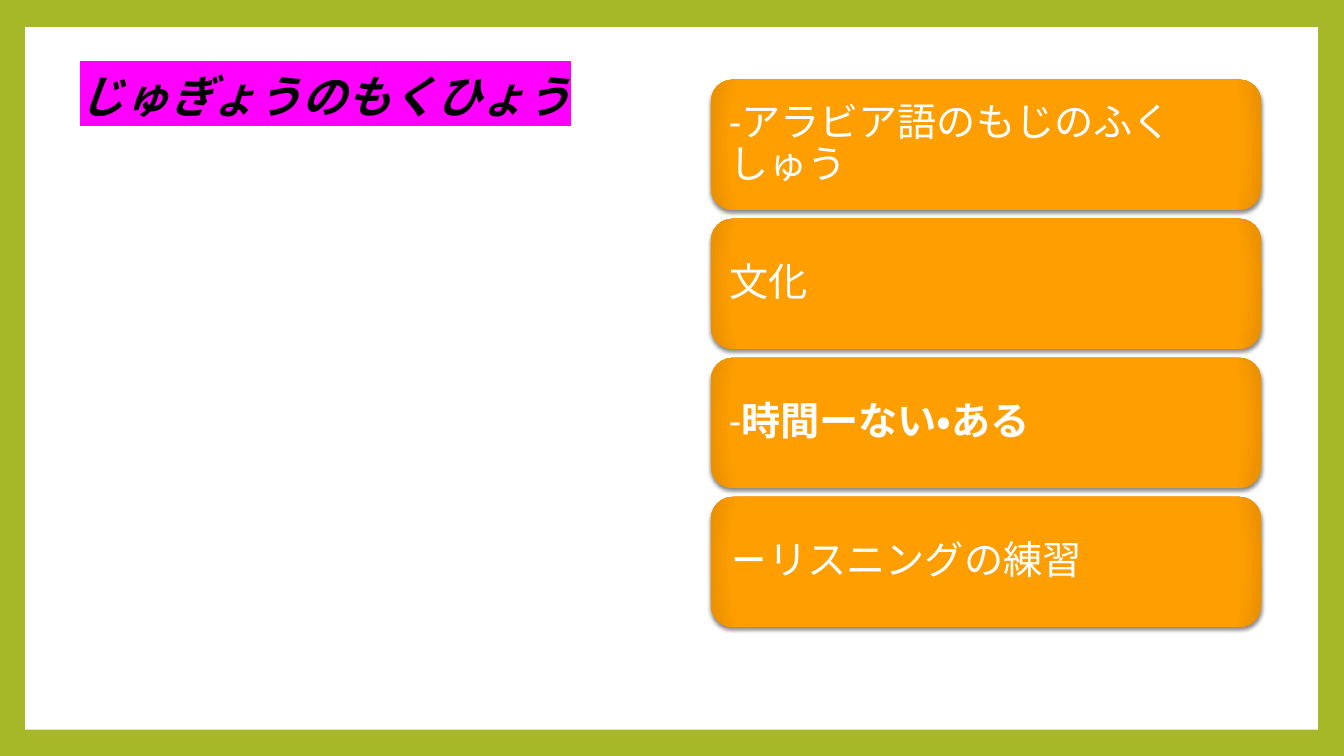
import pptx
import pptx.dml.color
import pptx.enum.lang
import pptx.enum.shapes
import pptx.enum.text
import pptx.oxml
import pptx.oxml.ns
import pptx.util

WIDTH, HEIGHT = 13.33, 7.5
GREEN = pptx.dml.color.RGBColor(0xA6, 0xB7, 0x27)
WHITE = pptx.dml.color.RGBColor(0xFF, 0xFF, 0xFF)
BLACK = pptx.dml.color.RGBColor(0x00, 0x00, 0x00)
MAGENTA = pptx.dml.color.RGBColor(0xFF, 0x00, 0xFF)
ORANGE = pptx.dml.color.RGBColor(0xFE, 0x9E, 0x00)
DARK_ORANGE = pptx.dml.color.RGBColor(0xE7, 0x8F, 0x00)
FONT = "Calibri"
NAMESPACE = pptx.oxml.ns.nsdecls("a")

TITLE = "じゅぎょうのもくひょう"
GOALS = [
    [("-アラビア語のもじのふくしゅう", False)],
    [("文化", False)],
    [("-", False), ("時間ーない・ある", True)],
    [("－", True), ("リスニングの練習", False)],
]


def inches(*lengths):
    """Convert lengths in inches to a list of slide lengths."""
    return [pptx.util.Inches(length) for length in lengths]


def set_margins(text_frame, margin):
    """Give all four sides of a text frame the same margin and wrap its text."""
    text_frame.word_wrap = True
    for side in ("left", "top", "right", "bottom"):
        setattr(text_frame, f"margin_{side}", pptx.util.Inches(margin))


def format_run(run, size, color, bold):
    """Set the font of a Japanese run."""
    run.font.name = FONT
    run.font.size = pptx.util.Pt(size)
    run.font.bold = bold
    run.font.color.rgb = color
    run.font.language_id = pptx.enum.lang.MSO_LANGUAGE_ID.JAPANESE


def add_frame(slide, left, top, width, height):
    """Draw the white page on the green background."""
    slide.background.fill.solid()
    slide.background.fill.fore_color.rgb = GREEN
    page = slide.shapes.add_shape(
        pptx.enum.shapes.MSO_SHAPE.RECTANGLE, *inches(left, top, width, height))
    page.shadow.inherit = False
    page.fill.solid()
    page.fill.fore_color.rgb = WHITE
    page.line.fill.background()


def add_title(slide, left, top, width, height):
    """Write the highlighted title in its box."""
    text_frame = slide.shapes.add_textbox(*inches(left, top, width, height)).text_frame
    set_margins(text_frame, 0)
    text_frame.text = TITLE
    run = text_frame.paragraphs[0].runs[0]
    format_run(run, 32, BLACK, True)
    run.font.italic = True
    highlight = pptx.oxml.parse_xml(
        f'<a:highlight {NAMESPACE}><a:srgbClr val="{MAGENTA}"/></a:highlight>')
    run.font._element.find(pptx.oxml.ns.qn("a:solidFill")).addnext(highlight)


def style_card(card):
    """Give a card its orange gradient and soft shadow."""
    stops = "".join(
        f'<a:gs pos="{position * 1000}"><a:srgbClr val="{color}"/></a:gs>'
        for position, color in ((0, ORANGE), (90, ORANGE), (100, DARK_ORANGE)))
    gradient = pptx.oxml.parse_xml(
        f'<a:gradFill {NAMESPACE} rotWithShape="1"><a:gsLst>{stops}</a:gsLst>'
        '<a:path path="circle">'
        '<a:fillToRect l="100000" t="100000" r="100000" b="100000"/>'
        '</a:path></a:gradFill>')
    shadow = pptx.oxml.parse_xml(
        f'<a:outerShdw {NAMESPACE} blurRad="38100" dist="25400" dir="5400000" '
        'rotWithShape="0"><a:srgbClr val="000000"><a:alpha val="45000"/>'
        '</a:srgbClr></a:outerShdw>')
    card.line.fill.background()
    card.shadow.inherit = False
    properties = card._element.spPr
    properties.find(pptx.oxml.ns.qn("a:prstGeom")).addnext(gradient)
    properties.find(pptx.oxml.ns.qn("a:effectLst")).append(shadow)


def add_goals(slide, left, top, width, height, gap=0.09):
    """Stack one card per goal in the given box."""
    card_height = (height - gap * (len(GOALS) - 1)) / len(GOALS)
    for row, goal in enumerate(GOALS):
        card = slide.shapes.add_shape(
            pptx.enum.shapes.MSO_SHAPE.ROUNDED_RECTANGLE,
            *inches(left, top + row * (card_height + gap), width, card_height))
        style_card(card)
        set_margins(card.text_frame, 0.12)
        card.text_frame.vertical_anchor = pptx.enum.text.MSO_ANCHOR.MIDDLE
        paragraph = card.text_frame.paragraphs[0]
        paragraph.alignment = pptx.enum.text.PP_ALIGN.LEFT
        paragraph.line_spacing = 0.9
        for text, bold in goal:
            run = paragraph.add_run()
            run.text = text
            format_run(run, 28, WHITE, bold)


def main():
    """Build the slide and save it."""
    presentation = pptx.Presentation()
    presentation.slide_width, presentation.slide_height = inches(WIDTH, HEIGHT)
    slide = presentation.slides.add_slide(presentation.slide_layouts[6])
    add_frame(slide, 0.25, 0.27, 12.82, 6.97)
    add_title(slide, 0.79, 0.68, 5.49, 1.61)
    add_goals(slide, 7.05, 0.79, 5.46, 5.43)
    presentation.save("out.pptx")


if __name__ == "__main__":
    main()
